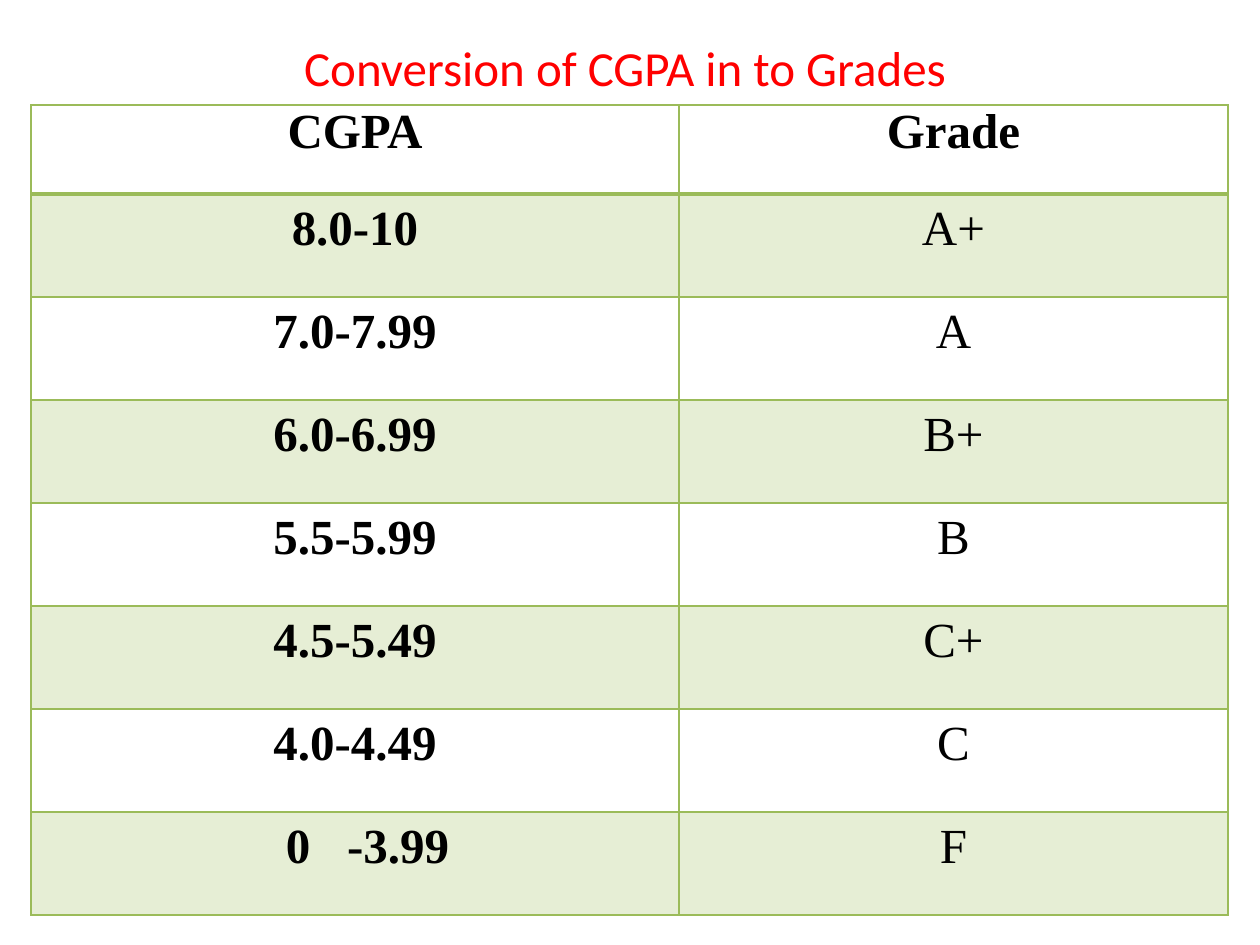
"""Build a slide with a table that converts CGPA ranges into grades."""
from lxml.etree import SubElement
from pptx import Presentation
from pptx.dml.color import RGBColor
from pptx.enum.text import MSO_ANCHOR as Anchor, PP_ALIGN as Align
from pptx.oxml.ns import qn
from pptx.util import Pt

TITLE = "Conversion of CGPA in to Grades"
ROWS = [
    ("CGPA", "Grade"),
    ("8.0-10", "A+"),
    ("7.0-7.99", "A"),
    ("6.0-6.99", "B+"),
    ("5.5-5.99", "B"),
    ("4.5-5.49", "C+"),
    ("4.0-4.49", "C"),
    ("0   -3.99", "F"),
]
COLORS = {"title": "FF0000", "text": "000000", "line": "9BBB59", "band": "E6EED5"}
PX = 914400 / 126
SLIDE = (1260, 945)
TITLE_BOX = (121, 31, 1008, 72)
TABLE_LEFT, TABLE_TOP = 31, 105
COLUMNS = (648, 549)
HEADER_HEIGHT, ROW_HEIGHT = 89, 103
CELL_MARGIN, LAST_INDENT = 9, 255


def px(value):
    return round(value * PX)


def write(frame, text, font="Times New Roman", color="text", bold=False,
          align=Align.CENTER, spacing=1.0):
    para = frame.paragraphs[0]
    para.alignment = align
    para.line_spacing = spacing
    span = para.add_run()
    span.text = text
    span.font.name = font
    span.font.size = Pt(28)
    span.font.bold = bold
    span.font.color.rgb = RGBColor.from_string(COLORS[color])


def add_borders(cell, top, bottom):
    properties = cell._tc.get_or_add_tcPr()
    for side, width in (("L", 1), ("R", 1), ("T", top), ("B", bottom)):
        line = SubElement(properties, qn(f"a:ln{side}"), w=str(Pt(width)))
        fill = SubElement(line, qn("a:solidFill"))
        SubElement(fill, qn("a:srgbClr"), val=COLORS["line"])


def add_title(page):
    box = page.shapes.title
    box.left, box.top, box.width, box.height = map(px, TITLE_BOX)
    box.text_frame.vertical_anchor = Anchor.MIDDLE
    write(box.text_frame, TITLE, font="Calibri", color="title")


def add_grades(page):
    heights = [HEADER_HEIGHT] + [ROW_HEIGHT] * (len(ROWS) - 1)
    area = (TABLE_LEFT, TABLE_TOP, sum(COLUMNS), sum(heights))
    table = page.shapes.add_table(len(ROWS), len(COLUMNS), *map(px, area)).table
    table.first_row = table.horz_banding = False
    for column, width in zip(table.columns, COLUMNS):
        column.width = px(width)
    for r, (row, height) in enumerate(zip(ROWS, heights)):
        table.rows[r].height = px(height)
        for c, text in enumerate(row):
            cell = table.cell(r, c)
            indented = r == len(ROWS) - 1 and c == 0
            cell.margin_left = px(LAST_INDENT if indented else CELL_MARGIN)
            cell.margin_right = px(CELL_MARGIN)
            cell.margin_top = cell.margin_bottom = 0
            add_borders(cell, top=2.25 if r == 1 else 1, bottom=2.25 if r == 0 else 1)
            if r % 2:
                cell.fill.solid()
                cell.fill.fore_color.rgb = RGBColor.from_string(COLORS["band"])
            else:
                cell.fill.background()
            write(cell.text_frame, text, bold=r == 0 or c == 0,
                  align=Align.LEFT if indented else Align.CENTER,
                  spacing=1.15 if r else 1.0)


def main():
    deck = Presentation()
    deck.slide_width, deck.slide_height = map(px, SLIDE)
    page = deck.slides.add_slide(deck.slide_layouts[5])
    add_grades(page)
    add_title(page)
    deck.save("out.pptx")


if __name__ == "__main__":
    main()
